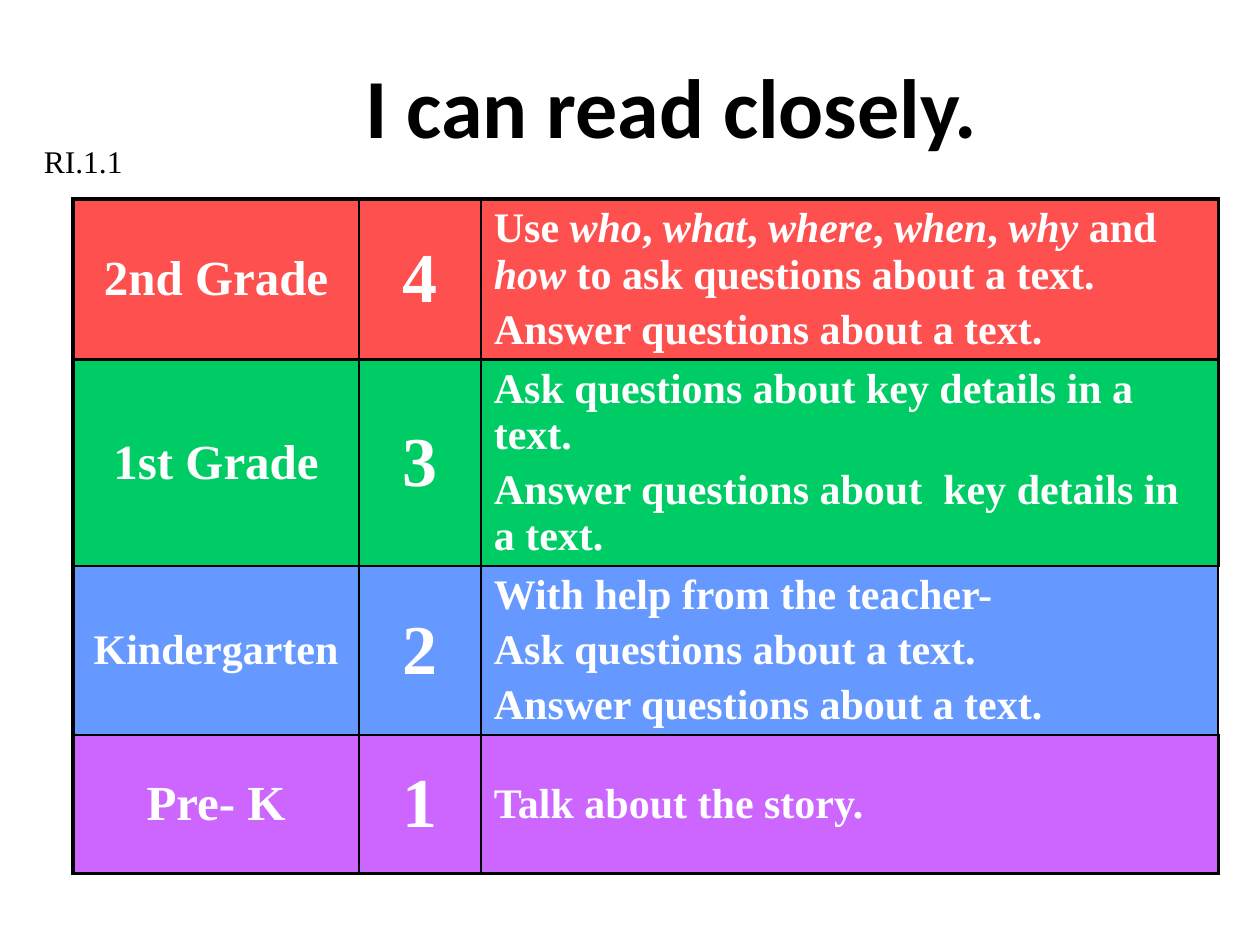
from lxml.etree import SubElement
from pptx import Presentation
from pptx.dml.color import RGBColor
from pptx.enum.text import MSO_ANCHOR as Anchor, PP_ALIGN as Align
from pptx.oxml.ns import qn
from pptx.util import Inches, Pt

# Content: words between asterisks are italic
TITLE = "I can read closely."
STANDARD = "RI.1.1"
LEVELS = [
    ("2nd Grade", "4", [
        "Use *who*, *what*, *where*, *when*, *why* and *how* to ask questions about a text.",
        "Answer questions about a text."]),
    ("1st Grade", "3", [
        "Ask questions about key details in a text.",
        "Answer questions about  key details in a text."]),
    ("Kindergarten", "2", [
        "With help from the teacher-",
        "Ask questions about a text.",
        "Answer questions about a text."]),
    ("Pre- K", "1", ["Talk about the story."]),
]

# Format
COLORS = {"black": "000000", "white": "FFFFFF"}
LEVEL_FILLS = ["FF5050", "00CC66", "6699FF", "CC66FF"]
GRADE_SIZES = [28, 28, 24, 28]
SCORE_SIZE, SKILL_SIZE = 40, 24
COLUMN_WIDTHS = [2.27, 0.97, 5.85]
ROW_HEIGHTS = [1.1, 1.27, 1.1, 1.1]
# Border widths in points: left, top, right, bottom
BORDERS = [
    [(2.25, 2.25, 1, 1.5), (1, 2.25, 1, 1.5), (1, 2.25, 2.25, 1.5)],
    [(2.25, 1.5, 1, 1), (1, 1.5, 1, 1), (1, 1.5, 2.25, 1.5)],
    [(2.25, 1, 1.5, 1), (1.5, 1, 1.5, 1), (1.5, 1.5, 1.5, 1.5)],
    [(2.25, 1, 1, 1.5), (1, 1, 1, 1.5), (1, 1.5, 2.25, 1.5)],
]


def style_font(font, color, **values):
    for name, value in values.items():
        setattr(font, name, value)
    font.color.rgb = RGBColor.from_string(COLORS[color])


def add_borders(cell, widths):
    properties = cell._tc.get_or_add_tcPr()
    for position, (side, width) in enumerate(zip("LTRB", widths)):
        line = properties.makeelement(qn(f"a:ln{side}"), {"w": str(Pt(width))})
        fill = SubElement(line, qn("a:solidFill"))
        SubElement(fill, qn("a:srgbClr"), val=COLORS["black"])
        properties.insert(position, line)


def fill_cell(cell, lines, size, align, color, widths):
    cell.vertical_anchor = Anchor.MIDDLE
    cell.fill.solid()
    cell.fill.fore_color.rgb = RGBColor.from_string(color)
    add_borders(cell, widths)
    frame = cell.text_frame
    for number, line in enumerate(lines):
        paragraph = frame.add_paragraph() if number else frame.paragraphs[0]
        paragraph.alignment = align
        paragraph.space_before = Pt(0.2 * size if number else 0)
        for part, words in enumerate(line.split("*")):
            if words:
                run = paragraph.add_run()
                run.text = words
                style_font(run.font, "white", name="Times New Roman", size=Pt(size),
                           bold=True, italic=part % 2 == 1)


deck = Presentation()
deck.slide_width, deck.slide_height = Inches(10), Inches(7.5)
slide = deck.slides.add_slide(deck.slide_layouts[5])

# Title
title = slide.shapes.title
title.left, title.top, title.width, title.height = map(Inches, (1.08, 0.33, 8.5, 1))
title.text_frame.vertical_anchor = Anchor.MIDDLE
heading = title.text_frame.paragraphs[0]
heading.alignment = Align.CENTER
heading_run = heading.add_run()
heading_run.text = TITLE
style_font(heading_run.font, "black", name="Calibri", size=Pt(48), bold=True)

# Rubric table
rubric = slide.shapes.add_table(
    len(LEVELS), len(COLUMN_WIDTHS), Inches(0.58), Inches(1.58),
    Inches(sum(COLUMN_WIDTHS)), Inches(sum(ROW_HEIGHTS))).table
rubric.first_row = rubric.horz_banding = False
for column, width in zip(rubric.columns, COLUMN_WIDTHS):
    column.width = Inches(width)
for row, height in zip(rubric.rows, ROW_HEIGHTS):
    row.height = Inches(height)

for r, (grade, score, skills) in enumerate(LEVELS):
    cells = [
        ([grade], GRADE_SIZES[r], Align.CENTER),
        ([score], SCORE_SIZE, Align.CENTER),
        (skills, SKILL_SIZE, Align.LEFT),
    ]
    for c, (lines, size, align) in enumerate(cells):
        fill_cell(rubric.cell(r, c), lines, size, align, LEVEL_FILLS[r], BORDERS[r][c])

# Standard code
standard = slide.shapes.add_textbox(*map(Inches, (0.25, 1.08, 1.42, 0.4))).text_frame
standard.word_wrap = True
standard_run = standard.paragraphs[0].add_run()
standard_run.text = STANDARD
style_font(standard_run.font, "black", name="Times New Roman", size=Pt(18))

deck.save("out.pptx")
